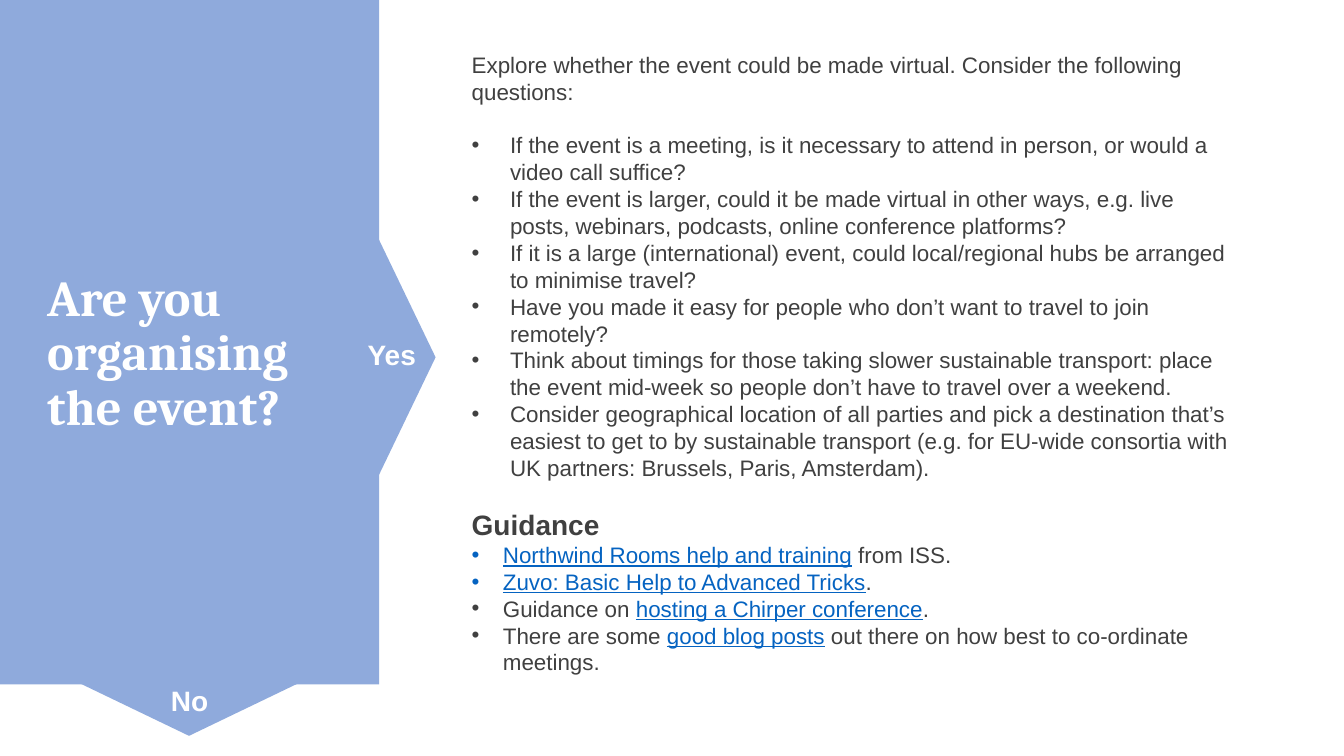
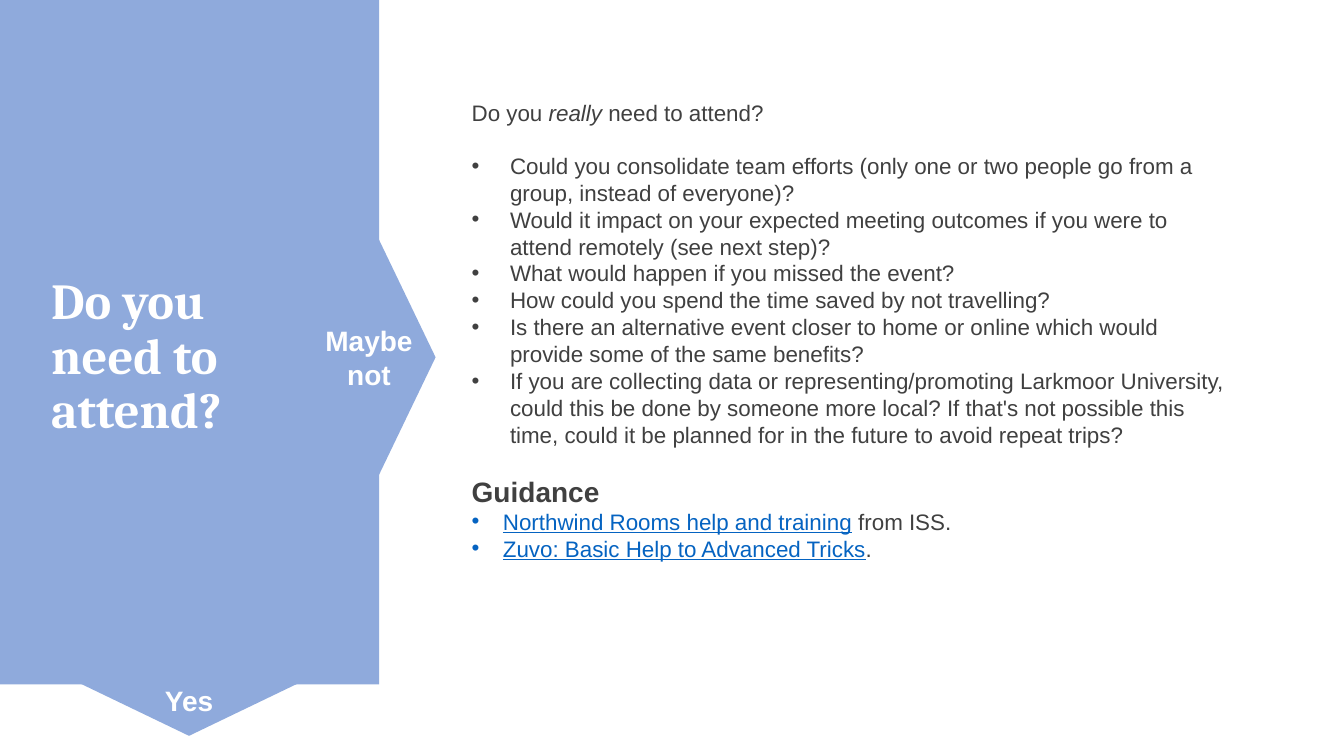
import pptx
import pptx.util
import pptx.dml.color
import pptx.enum.shapes
import pptx.enum.text
import pptx.oxml
from dataclasses import dataclass
from lxml import etree

Inches, Pt = pptx.util.Inches, pptx.util.Pt
Align, Anchor = pptx.enum.text.PP_ALIGN, pptx.enum.text.MSO_ANCHOR
Shape = pptx.enum.shapes.MSO_SHAPE


@dataclass(frozen=True)
class Theme:
    panel: str = "8FAADC"
    white: str = "FFFFFF"
    ink: str = "404040"
    link: str = "0563C1"
    title_font: str = "Cambria"
    body_font: str = "Arial"
    title_size: int = 36
    label_size: int = 20
    body_size: int = 16
    gap: int = 19


theme = Theme()


def write_text(page, place, paragraphs, font=theme.body_font, size=theme.body_size,
               color=theme.ink, bold=False, align=Align.LEFT, anchor=Anchor.TOP,
               wrap=True, line_spacing=None):
    """Each paragraph is a dict: spans, and optionally indent, before, size, bold."""
    box = page.shapes.add_textbox(*map(Inches, place))
    frame = box.text_frame
    frame.word_wrap = wrap
    frame.vertical_anchor = anchor
    for index, entry in enumerate(paragraphs):
        para = frame.paragraphs[0] if index == 0 else frame.add_paragraph()
        para.alignment = align
        if line_spacing:
            para.line_spacing = line_spacing
        para.space_before = Pt(entry.get("before", 0))
        if "indent" in entry:
            properties = para._p.get_or_add_pPr()
            properties.set("marL", str(Inches(entry["indent"])))
            properties.set("indent", str(-Inches(entry["indent"])))
            for tag, name, value in (("a:buFont", "typeface", "Arial"), ("a:buChar", "char", "•")):
                etree.SubElement(properties, pptx.oxml.ns.qn(tag)).set(name, value)
        for text, style in entry["spans"]:
            span = para.add_run()
            span.text = text
            span.font.name = font
            span.font.size = Pt(entry.get("size", size))
            span.font.bold = entry.get("bold", bold)
            span.font.italic = style == "italic"
            span.font.underline = style == "link"
            span.font.color.rgb = pptx.dml.color.RGBColor.from_string(
                theme.link if style == "link" else color)


def add_panel_shape(page, kind, place, rotation=0):
    shape = page.shapes.add_shape(kind, *map(Inches, place))
    shape.rotation = rotation
    shape.shadow.inherit = False
    shape.fill.solid()
    shape.fill.fore_color.rgb = pptx.dml.color.RGBColor.from_string(theme.panel)
    shape.line.fill.background()


# Content
shared_guidance = [
    [("Northwind Rooms help and training", "link"), (" from ISS.", "")],
    [("Zuvo: Basic Help to Advanced Tricks", "link"), (".", "")],
]
pages = [
    dict(
        title="Are you organising the event?", title_place=(0.37, 1.92, 2.91, 3.19),
        down="No", down_place=(1.59, 6.73, 0.58, 0.44),
        across="Yes", across_place=(3.54, 3.3, 0.69, 0.44),
        body_place=(4.58, 0.46, 7.71, 6.63),
        intro=[("Explore whether the event could be made virtual. Consider the following questions:", "")],
        questions=[
            "If the event is a meeting, is it necessary to attend in person, or would a video call suffice?",
            "If the event is larger, could it be made virtual in other ways, e.g. live posts, "
            "webinars, podcasts, online conference platforms?",
            "If it is a large (international) event, could local/regional hubs be arranged to minimise travel?",
            "Have you made it easy for people who don’t want to travel to join remotely?",
            "Think about timings for those taking slower sustainable transport: place the event "
            "mid-week so people don’t have to travel over a weekend.",
            "Consider geographical location of all parties and pick a destination that’s easiest "
            "to get to by sustainable transport (e.g. for EU-wide consortia with UK partners: "
            "Brussels, Paris, Amsterdam).",
        ],
        guidance=shared_guidance + [
            [("Guidance on ", ""), ("hosting a Chirper conference", "link"), (".", "")],
            [("There are some ", ""), ("good blog posts", "link"),
             (" out there on how best to co-ordinate meetings.", "")],
        ],
    ),
    dict(
        title="Do you need to attend?", title_place=(0.41, 2.17, 2.68, 2.76),
        down="Yes", down_place=(1.53, 6.73, 0.69, 0.44),
        across="Maybe not", across_place=(3.11, 3.16, 1.1, 0.77),
        body_place=(4.58, 0.93, 7.71, 6.36),
        intro=[("Do you ", ""), ("really", "italic"), (" need to attend?", "")],
        questions=[
            "Could you consolidate team efforts (only one or two people go from a group, instead of everyone)?",
            "Would it impact on your expected meeting outcomes if you were to attend remotely (see next step)?",
            "What would happen if you missed the event?",
            "How could you spend the time saved by not travelling?",
            "Is there an alternative event closer to home or online which would provide some of the same benefits?",
            "If you are collecting data or representing/promoting Larkmoor University, could this "
            "be done by someone more local? If that's not possible this time, could it be planned "
            "for in the future to avoid repeat trips?",
        ],
        guidance=shared_guidance,
    ),
]

deck = pptx.Presentation()
deck.slide_width, deck.slide_height = Inches(13.33), Inches(7.5)

for content in pages:
    page = deck.slides.add_slide(deck.slide_layouts[6])

    # Side panel with its downward and rightward arrow tips
    add_panel_shape(page, Shape.RECTANGLE, (0, 0, 3.76, 6.79))
    add_panel_shape(page, Shape.ISOSCELES_TRIANGLE, (0.69, 6.73, 2.37, 0.57), 180)
    add_panel_shape(page, Shape.ISOSCELES_TRIANGLE, (2.85, 3.26, 2.37, 0.57), 90)

    # Title and answers
    write_text(page, content["title_place"], [dict(spans=[(content["title"], "")])],
               font=theme.title_font, size=theme.title_size, color=theme.white, bold=True,
               anchor=Anchor.MIDDLE, line_spacing=0.9)
    for answer in ("down", "across"):
        write_text(page, content[answer + "_place"], [dict(spans=[(content[answer], "")])],
                   size=theme.label_size, color=theme.white, bold=True, align=Align.CENTER,
                   wrap=" " in content[answer])

    # Questions and guidance
    paragraphs = [dict(spans=content["intro"])]
    for index, question in enumerate(content["questions"]):
        paragraphs.append(dict(spans=[(question, "")], indent=0.38,
                               before=0 if index else theme.gap))
    paragraphs.append(dict(spans=[("Guidance", "")], size=theme.label_size, bold=True,
                           before=theme.gap))
    paragraphs += [dict(spans=spans, indent=0.31) for spans in content["guidance"]]
    write_text(page, content["body_place"], paragraphs)

deck.save("out.pptx")
